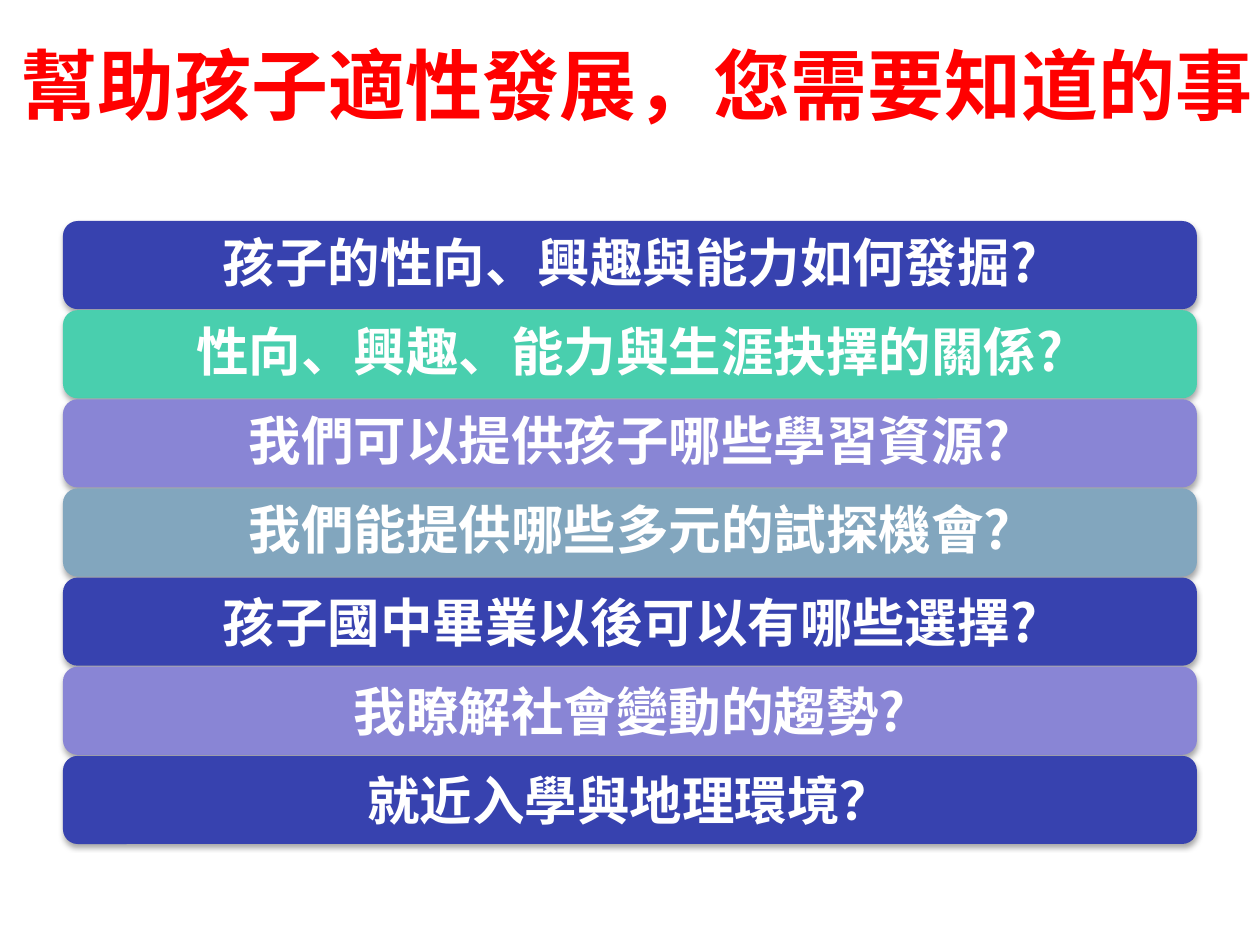
from lxml import etree
from pptx import Presentation
from pptx.dml.color import RGBColor
from pptx.enum.shapes import MSO_SHAPE
from pptx.enum.text import MSO_ANCHOR, PP_ALIGN
from pptx.oxml import parse_xml
from pptx.oxml.ns import nsdecls, qn
from pptx.util import Pt

PX = 914400 // 126
FONT = "Noto Sans CJK SC"
CENTER = PP_ALIGN.CENTER
MIDDLE = MSO_ANCHOR.MIDDLE
ROUNDED = MSO_SHAPE.ROUNDED_RECTANGLE

RED, WHITE = "FF0000", "FFFFFF"
BLUE, GREEN, VIOLET, STEEL = "3742AF", "49CFAE", "8985D5", "82A6BE"

TITLE = "幫助孩子適性發展，您需要知道的事"
# question, bar colour, line spacing
QUESTIONS = [
    ("孩子的性向、興趣與能力如何發掘?", BLUE, 0.9),
    ("性向、興趣、能力與生涯抉擇的關係?", GREEN, 0.9),
    ("我們可以提供孩子哪些學習資源?", VIOLET, 0.9),
    ("我們能提供哪些多元的試探機會?", STEEL, 0.9),
    ("孩子國中畢業以後可以有哪些選擇?", BLUE, 1.0),
    ("我瞭解社會變動的趨勢?", VIOLET, 1.0),
    ("就近入學與地理環境？", BLUE, 1.0),
]

SHADOW = f"""<a:effectLst {nsdecls('a')}>
  <a:outerShdw blurRad="40000" dist="23000" dir="5400000" rotWithShape="0">
    <a:srgbClr val="000000"><a:alpha val="35000"/></a:srgbClr>
  </a:outerShdw>
</a:effectLst>"""


def color(hex_code):
    return RGBColor.from_string(hex_code)


def emu(box):
    return [round(length * PX) for length in box]


def write_line(shape, text, size, hex_code, inset, spacing=1.0):
    """Fill a shape with one bold, centred line of text."""
    frame = shape.text_frame
    frame.word_wrap = True
    frame.vertical_anchor = MIDDLE
    frame.margin_left = frame.margin_right = inset * PX
    frame.margin_top = frame.margin_bottom = inset * PX
    para = frame.paragraphs[0]
    para.text = text
    para.alignment = CENTER
    para.line_spacing = spacing
    font = para.font
    font.size, font.bold, font.name = Pt(size), True, FONT
    font.color.rgb = color(hex_code)
    properties = para._p.pPr.find(qn("a:defRPr"))
    etree.SubElement(properties, qn("a:ea"), typeface=FONT)


def add_title(page, box):
    write_line(page.shapes.add_textbox(*emu(box)), TITLE, 44, RED, 6)


def add_question_bars(page, box, gap=1):
    left, top, width, height = box
    bar_height = (height + gap) / len(QUESTIONS) - gap
    for row, (question, fill, spacing) in enumerate(QUESTIONS):
        bar_top = top + row * (bar_height + gap)
        bar = page.shapes.add_shape(
            ROUNDED, *emu((left, bar_top, width, bar_height)))
        bar.fill.solid()
        bar.fill.fore_color.rgb = color(fill)
        bar.line.fill.background()
        bar._element.spPr.append(parse_xml(SHADOW))
        write_line(bar, question, 30, WHITE, 15, spacing)


def main():
    deck = Presentation()
    deck.slide_width, deck.slide_height = emu((1260, 945))
    page = deck.slides.add_slide(deck.slide_layouts[6])
    add_title(page, (0, 5, 1275, 158))
    add_question_bars(page, (63, 221, 1134, 623))
    deck.save("out.pptx")


if __name__ == "__main__":
    main()
